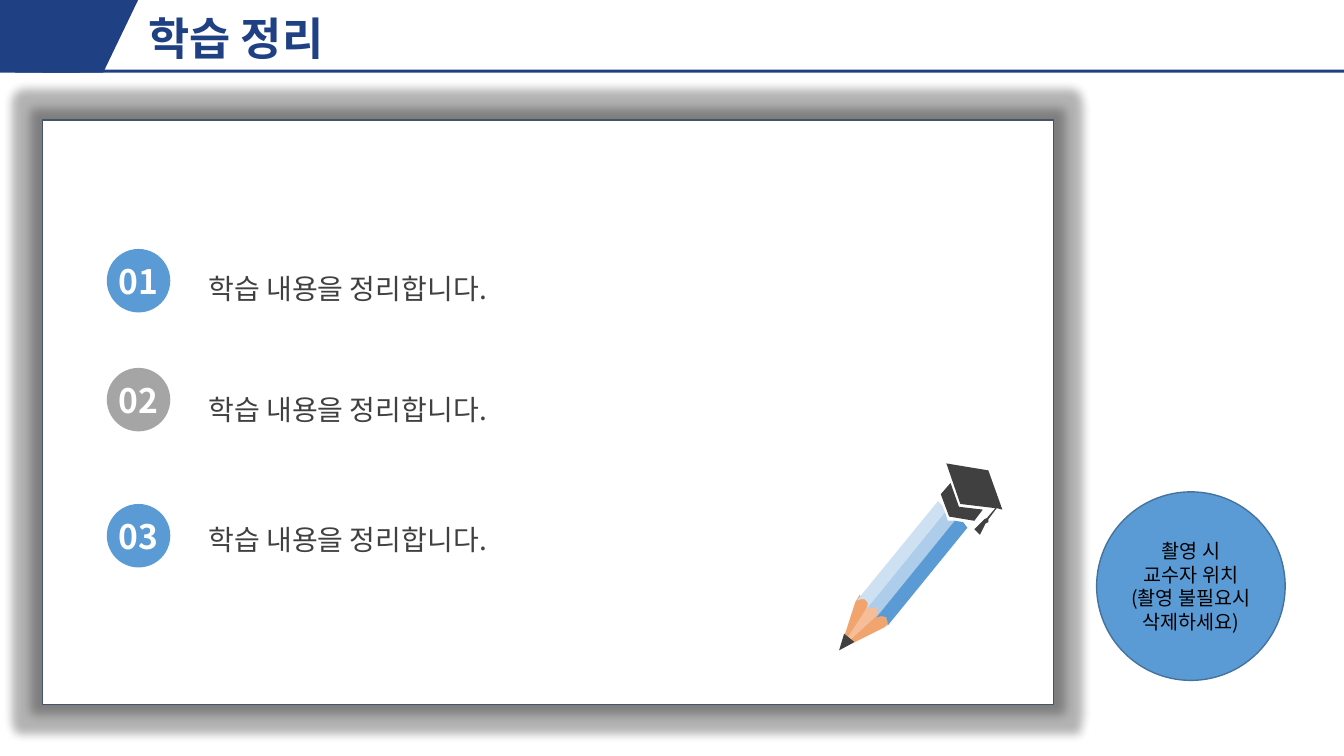
from lxml import etree
from pptx import Presentation
from pptx.dml.color import RGBColor
from pptx.enum.shapes import MSO_SHAPE
from pptx.enum.text import MSO_ANCHOR, PP_ALIGN
from pptx.oxml.ns import qn
from pptx.util import Pt

RECT, OVAL = MSO_SHAPE.RECTANGLE, MSO_SHAPE.OVAL
PARALLELOGRAM, TRIANGLE = MSO_SHAPE.PARALLELOGRAM, MSO_SHAPE.ISOSCELES_TRIANGLE
LEFT, CENTER, MIDDLE = PP_ALIGN.LEFT, PP_ALIGN.CENTER, MSO_ANCHOR.MIDDLE
FONT = "Noto Sans CJK KR"
COLORS = {
    "navy": "1F4184", "blue": "5B9BD5", "blue_edge": "43739E", "gray": "A5A5A5",
    "slate": "44546A", "white": "FFFFFF", "black": "000000", "dark": "404040",
    "wood": "F2A46F", "wood_light": "F6BE98", "pale": "CEE1F2", "sky": "ADCDEA",
}


def paint(sp, fill, line=None):
    sp.shadow.inherit = False
    sp.fill.solid()
    sp.fill.fore_color.rgb = RGBColor.from_string(COLORS[fill])
    if line:
        sp.line.color.rgb = RGBColor.from_string(COLORS[line])
        sp.line.width = Pt(1)
    else:
        sp.line.fill.background()
    return sp


def write(sp, text, size, color, bold=False, align=LEFT, wrap=True, spacing=None):
    tf = sp.text_frame
    tf.word_wrap = wrap
    tf.text = text
    for p in tf.paragraphs:
        p.alignment = align
        p.line_spacing = spacing
        for r in p.runs:
            r.font.name = FONT
            r.font.size = Pt(size)
            r.font.bold = bold
            r.font.color.rgb = RGBColor.from_string(COLORS[color])
            etree.SubElement(r.font._element, qn("a:ea"), typeface=FONT)
    return tf


prs = Presentation()
prs.slide_width, prs.slide_height = Pt(960), Pt(540)
s = prs.slides.add_slide(prs.slide_layouts[5])

# Header band and title
slant = paint(s.shapes.add_shape(PARALLELOGRAM, Pt(10.8), 0, Pt(87.84), Pt(51.84)), "navy")
slant.adjustments[0] = 0.481
paint(s.shapes.add_shape(RECT, 0, 0, Pt(56.9), Pt(51.84)), "navy")
paint(s.shapes.add_shape(RECT, Pt(30.24), Pt(49.68), Pt(929.76), Pt(2.16)), "navy")

title = s.shapes.title
title.left, title.top, title.width, title.height = Pt(98.64), Pt(5.76), Pt(828), Pt(46.8)
write(title, "학습 정리", 32, "navy", bold=True, spacing=0.9).vertical_anchor = MIDDLE

# Panel with a soft gray glow
panel = s.shapes.add_shape(RECT, Pt(30.24), Pt(85.68), Pt(722.16), Pt(417.6))
paint(panel, "white", "slate")
effects = panel._element.spPr.find(qn("a:effectLst"))
glow = etree.SubElement(effects, qn("a:glow"), rad=str(Pt(14)))
glow_color = etree.SubElement(glow, qn("a:srgbClr"), val=COLORS["black"])
etree.SubElement(glow_color, qn("a:alpha"), val="30000")

# Presenter position
presenter = s.shapes.add_shape(OVAL, Pt(783.36), Pt(351.36), Pt(134.64), Pt(134.64))
paint(presenter, "blue", "blue_edge")
write(presenter, "촬영 시\n교수자 위치\n(촬영 불필요시\n삭제하세요)", 14, "black",
      align=CENTER, wrap=False).vertical_anchor = MIDDLE

# Numbered summary points
POINTS = [("01", "blue", 177.84, 190.08), ("02", "gray", 262.8, 276.48),
          ("03", "blue", 360, 369.36)]
for number, color, badge_top, text_top in POINTS:
    badge = s.shapes.add_shape(OVAL, Pt(76.32), Pt(badge_top), Pt(45.36), Pt(45.36))
    paint(badge, color)
    write(badge, number, 24, "white", bold=True, align=CENTER,
          wrap=False).vertical_anchor = MIDDLE
    box = s.shapes.add_textbox(Pt(141.84), Pt(text_top), Pt(544.32), Pt(31.5))
    write(box, "학습 내용을 정리합니다.", 20, "dark")

# Pencil with graduation cap: colour and contours, back to front
PENCIL = [
    ("wood", [[(614.2, 424.8), (636.5, 443.5), (632.2, 447.8), (600.5, 464.4),
               (610.6, 429.8)]]),
    ("wood_light", [[(621.4, 430.6), (629.3, 436.3), (626.4, 439.9), (600.5, 464.4),
                     (617.8, 435.6)]]),
    ("pale", [[(669.6, 357.8), (673.2, 361.4), (674.6, 366.5), (619.2, 434.9),
               (619.6, 431.4), (618.5, 428.4), (615, 427.7), (612, 429.1)]]),
    ("sky", [[(674.6, 366.5), (676.8, 371.5), (681.8, 372.2), (626.4, 440.6),
              (626.8, 437.1), (625.7, 434.2), (622.5, 433.7), (619.2, 434.9)]]),
    ("blue", [[(687.6, 373), (691.2, 376.6), (633.6, 447.1), (634.2, 443.6),
               (632.9, 440.6), (629.7, 439.5), (626.4, 441.4), (681.8, 372.2)]]),
    ("dark", [[(679, 344.9), (684.7, 362.2), (702, 364.3), (696.2, 371.5),
               (678.2, 369.4), (672.5, 352.8)],
              [(706.3, 335.5), (715.7, 363.6), (712.1, 362.9), (706.3, 370.8),
               (705.6, 373), (704.2, 373.7), (699.8, 381.6), (695.5, 378),
               (702, 372.2), (702.7, 370.8), (704.9, 370.1), (710.6, 362.9),
               (686.2, 360), (676.1, 331.2)]]),
]
pencil = s.shapes.add_group_shape()
for color, contours in PENCIL:
    builder = pencil.shapes.build_freeform(*contours[0][0], scale=Pt(1))
    builder.add_line_segments(contours[0][1:])
    for contour in contours[1:]:
        builder.move_to(*contour[0])
        builder.add_line_segments(contour[1:])
    paint(builder.convert_to_shape(), color)
tip = pencil.shapes.add_shape(TRIANGLE, Pt(598.3), Pt(454.3), Pt(9.4), Pt(11.5))
tip.rotation = 219.1
paint(tip, "dark")

prs.save("out.pptx")
